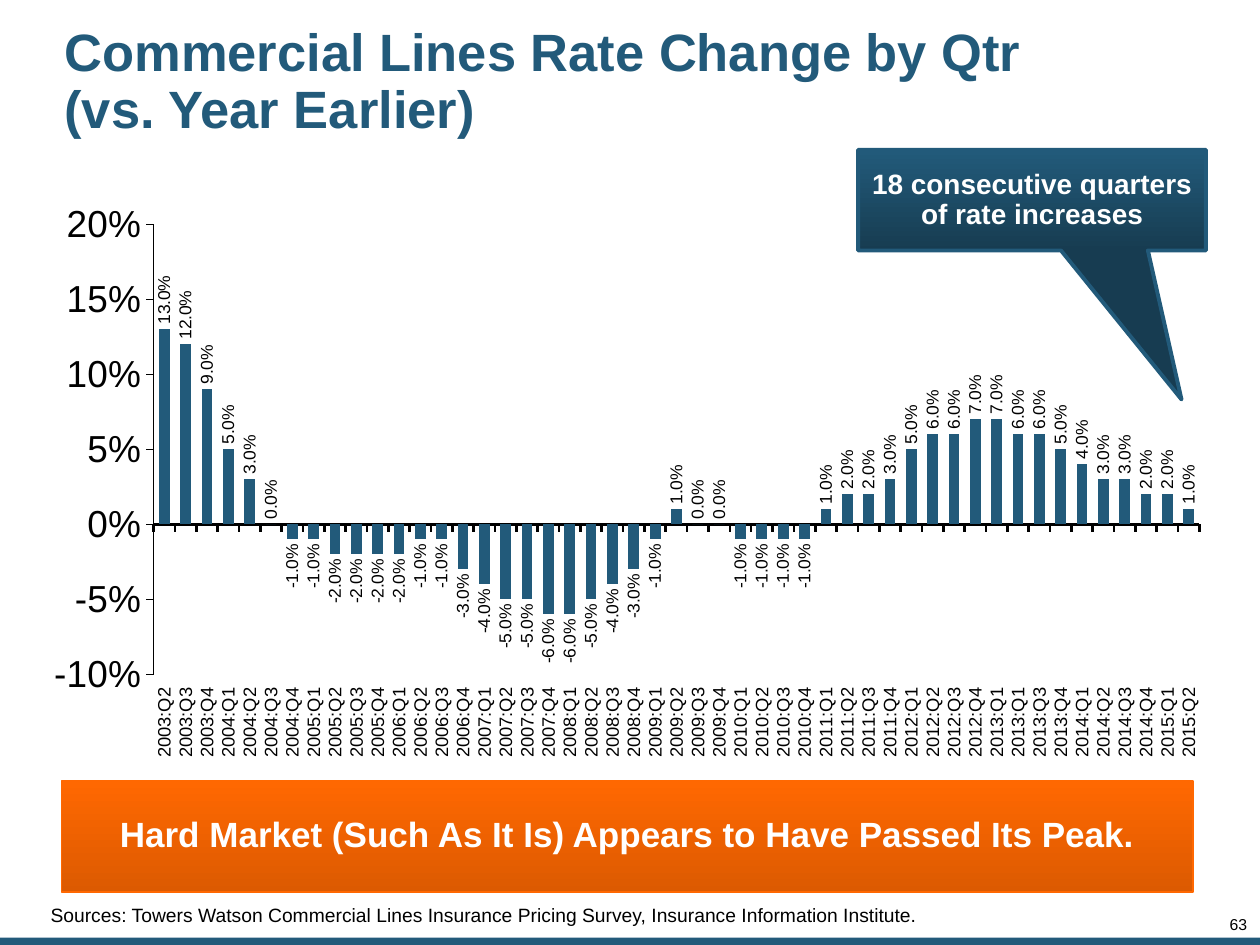
from dataclasses import dataclass
from typing import Optional

import pptx
import pptx.chart.data
import pptx.dml.color
import pptx.enum.chart
import pptx.enum.shapes
import pptx.enum.text
import pptx.oxml
import pptx.oxml.ns
import pptx.util

Cm, Pt = pptx.util.Cm, pptx.util.Pt
RGBColor = pptx.dml.color.RGBColor
Shape = pptx.enum.shapes.MSO_SHAPE
Align = pptx.enum.text.PP_ALIGN
Anchor = pptx.enum.text.MSO_ANCHOR
ChartEnum = pptx.enum.chart

BLUE = RGBColor(0x22, 0x5A, 0x7A)
DARK_BLUE = RGBColor(0x17, 0x3C, 0x51)
ORANGE = RGBColor(0xFF, 0x68, 0x01)
DARK_ORANGE = RGBColor(0xDC, 0x5A, 0x01)
BLACK = RGBColor(0, 0, 0)
WHITE = RGBColor(0xFF, 0xFF, 0xFF)

RATE_CHANGES = [  # percent
    13, 12, 9, 5, 3, 0, -1,
    -1, -2, -2, -2, -2, -1, -1, -3,
    -4, -5, -5, -6, -6, -5, -4, -3,
    -1, 1, 0, 0, -1, -1, -1, -1,
    1, 2, 2, 3, 5, 6, 6, 7,
    7, 6, 6, 5, 4, 3, 3, 2,
    2, 1,
]


@dataclass
class Wording:
    text: str
    size: float
    color: RGBColor
    bold: bool = False
    align: Align = Align.LEFT
    anchor: Anchor = Anchor.MIDDLE
    line_spacing: float = 0.9
    insets: tuple = (0, 0, 0, 0)  # left, top, right, bottom in cm


@dataclass
class Panel:
    outline: Shape
    box: tuple
    top_color: RGBColor
    bottom_color: RGBColor
    line_width: float
    wording: Wording
    adjustments: tuple = ()


def set_font(font, size: float, color: RGBColor, bold: Optional[bool] = None) -> None:
    formats = {"name": "Arial", "size": Pt(size), "bold": bold}
    for attribute, value in formats.items():
        setattr(font, attribute, value)
    font.color.rgb = color


def write(frame, wording: Wording) -> None:
    left, top, right, bottom = map(Cm, wording.insets)
    formats = {
        "word_wrap": True,
        "auto_size": pptx.enum.text.MSO_AUTO_SIZE.NONE,
        "vertical_anchor": wording.anchor,
        "margin_left": left,
        "margin_top": top,
        "margin_right": right,
        "margin_bottom": bottom,
    }
    for attribute, value in formats.items():
        setattr(frame, attribute, value)
    paragraph = frame.paragraphs[0]
    paragraph.alignment = wording.align
    paragraph.line_spacing = wording.line_spacing
    run = paragraph.add_run()
    run.text = wording.text
    set_font(run.font, wording.size, wording.color, wording.bold)


def add_label(slide, box: tuple, wording: Wording) -> None:
    write(slide.shapes.add_textbox(*map(Cm, box)).text_frame, wording)


def add_panel(slide, panel: Panel) -> None:
    shape = slide.shapes.add_shape(panel.outline, *map(Cm, panel.box))
    shape.shadow.inherit = False
    for index, value in enumerate(panel.adjustments):
        shape.adjustments[index] = value
    shape.fill.gradient()
    shape.fill.gradient_angle = 270
    for stop, color in zip(shape.fill.gradient_stops, (panel.top_color, panel.bottom_color)):
        stop.color.rgb = color
    shape.line.color.rgb = panel.top_color
    shape.line.width = Pt(panel.line_width)
    write(shape.text_frame, panel.wording)


def quarter_names() -> list[str]:
    first = 2003 * 4 + 1
    names = [f"{n // 4}:Q{n % 4 + 1}" for n in range(first, first + len(RATE_CHANGES))]
    names[names.index("2013:Q2")] = "2013:Q1"  # labelled Q1 twice on the slide
    return names


def place_plot(chart, x: float, y: float, w: float, h: float) -> None:
    """Fix the inner plot area, as fractions of the chart."""
    plot_area = chart._chartSpace.chart.plotArea
    for layout in plot_area.findall(pptx.oxml.ns.qn("c:layout")):
        plot_area.remove(layout)
    plot_area.insert(0, pptx.oxml.parse_xml(
        f'<c:layout {pptx.oxml.ns.nsdecls("c")}><c:manualLayout>'
        '<c:layoutTarget val="inner"/><c:xMode val="edge"/><c:yMode val="edge"/>'
        f'<c:x val="{x}"/><c:y val="{y}"/><c:w val="{w}"/><c:h val="{h}"/>'
        '</c:manualLayout></c:layout>'))


def turn_upright(chart, owner: str) -> None:
    """Make the labels of the named chart part read from bottom to top."""
    for body in chart._chartSpace.xpath(f".//{owner}/c:txPr/a:bodyPr"):
        body.set("rot", "-5400000")
        body.set("vert", "horz")


def add_rate_chart(slide) -> None:
    data = pptx.chart.data.CategoryChartData(number_format="0.0%")
    data.categories = quarter_names()
    data.add_series("Series 1", [rate / 100 for rate in RATE_CHANGES])
    chart = slide.shapes.add_chart(
        ChartEnum.XL_CHART_TYPE.COLUMN_CLUSTERED,
        Cm(1.09), Cm(3.71), Cm(23.32), Cm(11.63), data).chart
    chart.has_legend = False
    chart.has_title = False
    set_font(chart.font, 21.5, BLACK)
    place_plot(chart, 0.07, 0.07, 0.92, 0.78)

    quarters, rates = chart.category_axis, chart.value_axis
    for axis, size, width in ((quarters, 10.5, 1.54), (rates, 21.5, 0.38)):
        axis.has_major_gridlines = False
        axis.major_tick_mark = ChartEnum.XL_TICK_MARK.OUTSIDE
        axis.format.line.color.rgb = BLACK
        axis.format.line.width = Pt(width)
        set_font(axis.tick_labels.font, size, BLACK)
    quarters.tick_label_position = ChartEnum.XL_TICK_LABEL_POSITION.LOW
    scale = {"minimum_scale": -0.1, "maximum_scale": 0.2, "major_unit": 0.05}
    for attribute, value in scale.items():
        setattr(rates, attribute, value)
    rates.tick_labels.number_format = "0%"
    rates.tick_labels.number_format_is_linked = False

    plot = chart.plots[0]
    plot.gap_width = 100
    plot.vary_by_categories = False
    columns = plot.series[0]
    columns.invert_if_negative = False
    columns.format.fill.solid()
    columns.format.fill.fore_color.rgb = BLUE
    labels = columns.data_labels
    set_font(labels.font, 10, BLACK)
    formats = {
        "show_value": True,
        "number_format": "0.0%",
        "number_format_is_linked": False,
        "position": ChartEnum.XL_LABEL_POSITION.OUTSIDE_END,
    }
    for attribute, value in formats.items():
        setattr(labels, attribute, value)
    for owner in ("c:catAx", "c:dLbls"):
        turn_upright(chart, owner)


def main() -> None:
    deck = pptx.Presentation()
    deck.slide_width, deck.slide_height = Cm(25.4), Cm(19.05)
    slide = deck.slides.add_slide(deck.slide_layouts[5])

    footer_bar = slide.shapes.add_shape(Shape.RECTANGLE, 0, Cm(18.9), Cm(25.4), Cm(0.15))
    footer_bar.shadow.inherit = False
    footer_bar.fill.solid()
    footer_bar.fill.fore_color.rgb = BLUE
    footer_bar.line.fill.background()

    title = slide.shapes.title
    title.left, title.top, title.width, title.height = map(Cm, (1.17, 0.46, 19.71, 2.44))
    write(title.text_frame, Wording(
        "Commercial Lines Rate Change by Qtr (vs. Year Earlier)", 30, BLUE, bold=True,
        insets=(0.13, 0.13, 0.13, 0.13)))

    add_label(slide, (23.9, 18.49, 1.24, 0.33), Wording(
        "63", 9, BLACK, align=Align.RIGHT, anchor=Anchor.TOP, line_spacing=0.85))
    add_label(slide, (0, 18.26, 21.03, 0.79), Wording(
        "Sources: Towers Watson Commercial Lines Insurance Pricing Survey, "
        "Insurance Information Institute.",
        11, BLACK, anchor=Anchor.BOTTOM, line_spacing=0.85, insets=(1.02, 0, 0, 0.38)))
    add_panel(slide, Panel(
        Shape.RECTANGLE, (1.24, 15.75, 22.81, 2.24), ORANGE, DARK_ORANGE, 1,
        Wording("Hard Market (Such As It Is) Appears to Have Passed Its Peak.", 20, WHITE,
                bold=True, align=Align.CENTER, line_spacing=0.95,
                insets=(0.25, 0.13, 0.25, 0.18))))
    add_rate_chart(slide)
    add_panel(slide, Panel(
        Shape.RECTANGULAR_CALLOUT, (17.3, 3.02, 7.01, 2.03), BLUE, DARK_BLUE, 2.25,
        Wording("18 consecutive quarters of rate increases", 16, WHITE, bold=True,
                align=Align.CENTER, insets=(0.25, 0.25, 0.25, 0.25)),
        adjustments=(0.43, 1.98)))
    deck.save("out.pptx")


if __name__ == "__main__":
    main()
